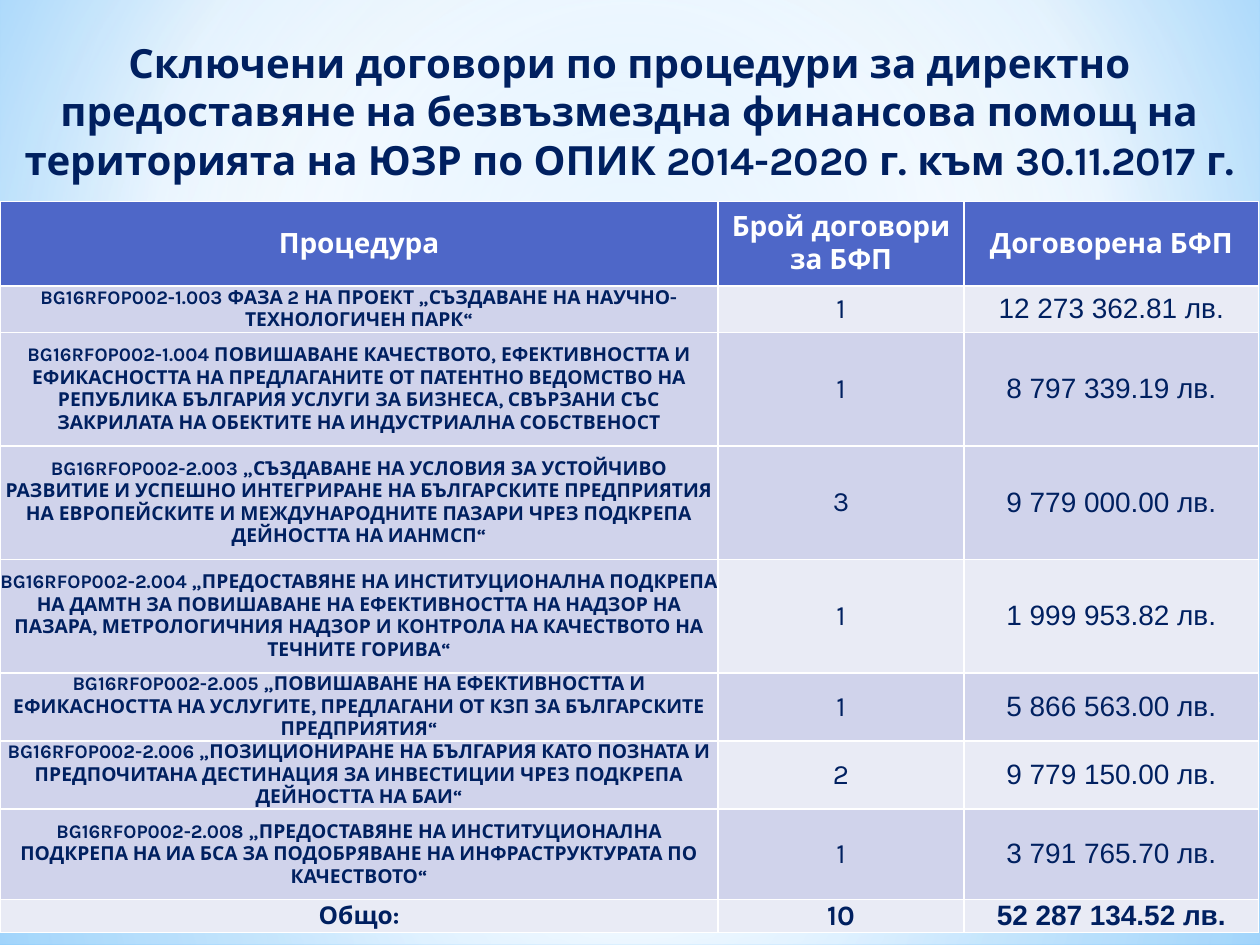
from dataclasses import dataclass

from lxml.etree import SubElement
from pptx import Presentation
from pptx.dml.color import RGBColor
from pptx.enum.shapes import MSO_SHAPE
from pptx.enum.text import MSO_ANCHOR, MSO_AUTO_SIZE, PP_ALIGN
from pptx.oxml.ns import qn
from pptx.util import Inches, Pt


@dataclass(frozen=True)
class Theme:
    navy: str = "002060"
    white: str = "FFFFFF"
    sky: str = "B4DCFA"
    header: str = "4E67C8"
    band: str = "D0D3EB"
    pale: str = "E9EBF5"
    backdrop: tuple = ((0, "9ED5FF", 100), (60, "FFFFFF", 100), (100, "5BB9FF", 100))
    text_font: str = "Karla"
    amount_font: str = "Arial"
    title_size: int = 23
    value_size: int = 16
    total_size: int = 14
    procedure_size: int = 11


TITLE = ("Сключени договори по процедури за директно предоставяне на безвъзмездна "
         "финансова помощ на територията на ЮЗР по ОПИК 2014-2020 г. към 30.11.2017 г.")
HEADINGS = ("Процедура", "Брой договори за БФП", "Договорена БФП")
CONTRACTS = (
    ("BG16RFOP002-1.003 ФАЗА 2 НА ПРОЕКТ „СЪЗДАВАНЕ НА НАУЧНО-ТЕХНОЛОГИЧЕН ПАРК“",
     "1", "12 273 362.81 лв."),
    ("BG16RFOP002-1.004 ПОВИШАВАНЕ КАЧЕСТВОТО, ЕФЕКТИВНОСТТА И ЕФИКАСНОСТТА НА "
     "ПРЕДЛАГАНИТЕ ОТ ПАТЕНТНО ВЕДОМСТВО НА РЕПУБЛИКА БЪЛГАРИЯ УСЛУГИ ЗА БИЗНЕСА, "
     "СВЪРЗАНИ СЪС ЗАКРИЛАТА НА ОБЕКТИТЕ НА ИНДУСТРИАЛНА СОБСТВЕНОСТ",
     "1", "8 797 339.19 лв."),
    ("BG16RFOP002-2.003 „СЪЗДАВАНЕ НА УСЛОВИЯ ЗА УСТОЙЧИВО РАЗВИТИЕ И УСПЕШНО "
     "ИНТЕГРИРАНЕ НА БЪЛГАРСКИТЕ ПРЕДПРИЯТИЯ НА ЕВРОПЕЙСКИТЕ И МЕЖДУНАРОДНИТЕ "
     "ПАЗАРИ ЧРЕЗ ПОДКРЕПА ДЕЙНОСТТА НА ИАНМСП“",
     "3", "9 779 000.00 лв."),
    ("BG16RFOP002-2.004 „ПРЕДОСТАВЯНЕ НА ИНСТИТУЦИОНАЛНА ПОДКРЕПА НА ДАМТН ЗА "
     "ПОВИШАВАНЕ НА ЕФЕКТИВНОСТТА НА НАДЗОР НА ПАЗАРА, МЕТРОЛОГИЧНИЯ НАДЗОР И "
     "КОНТРОЛА НА КАЧЕСТВОТО НА ТЕЧНИТЕ ГОРИВА“",
     "1", "1 999 953.82 лв."),
    ("BG16RFOP002-2.005 „ПОВИШАВАНЕ НА ЕФЕКТИВНОСТТА И ЕФИКАСНОСТТА НА УСЛУГИТЕ, "
     "ПРЕДЛАГАНИ ОТ КЗП ЗА БЪЛГАРСКИТЕ ПРЕДПРИЯТИЯ“",
     "1", "5 866 563.00 лв."),
    ("BG16RFOP002-2.006 „ПОЗИЦИОНИРАНЕ НА БЪЛГАРИЯ КАТО ПОЗНАТА И ПРЕДПОЧИТАНА "
     "ДЕСТИНАЦИЯ ЗА ИНВЕСТИЦИИ ЧРЕЗ ПОДКРЕПА ДЕЙНОСТТА НА БАИ“",
     "2", "9 779 150.00 лв."),
    ("BG16RFOP002-2.008 „ПРЕДОСТАВЯНЕ НА ИНСТИТУЦИОНАЛНА ПОДКРЕПА НА ИА БСА ЗА "
     "ПОДОБРЯВАНЕ НА ИНФРАСТРУКТУРАТА ПО КАЧЕСТВОТО“",
     "1", "3 791 765.70 лв."),
)
TOTAL = ("Общо:", "10", "52 287 134.52 лв.")
COLUMN_WIDTHS = (5.7, 1.95, 2.34)
ROW_HEIGHTS = (0.67, 0.37, 0.9, 0.9, 0.9, 0.54, 0.54, 0.72, 0.18)
PALE_ROWS = {1, 4, 6, 8}


def set_gradient(properties, stops, center=None):
    """Swap the solid fill for a gradient: radial around center, else top to bottom."""
    solid = properties.find(qn("a:solidFill"))
    gradient = SubElement(properties, qn("a:gradFill"), rotWithShape="1")
    properties.replace(solid, gradient)
    stop_list = SubElement(gradient, qn("a:gsLst"))
    for position, color, opacity in stops:
        stop = SubElement(stop_list, qn("a:gs"), pos=str(position * 1000))
        rgb = SubElement(stop, qn("a:srgbClr"), val=color)
        if opacity < 100:
            SubElement(rgb, qn("a:alpha"), val=str(opacity * 1000))
    if center:
        radial = SubElement(gradient, qn("a:path"), path="circle")
        SubElement(radial, qn("a:fillToRect"),
                   {side: str(inset * 1000) for side, inset in zip("ltrb", center)})
    else:
        SubElement(gradient, qn("a:lin"), ang="5400000", scaled="0")


class SlideBuilder:
    def __init__(self, slide, theme):
        self.slide = slide
        self.theme = theme

    def background(self):
        self.slide.background.fill.solid()
        properties = next(self.slide.element.iter(qn("p:bgPr")))
        set_gradient(properties, self.theme.backdrop, (20, 10, 20, 60))

    def glow(self, preset, top, height, stops, center=(50, 50, 50, 50)):
        glow = self.slide.shapes.add_shape(
            preset, 0, Inches(top), Inches(10), Inches(height))
        glow.shadow.inherit = False
        glow.line.fill.background()
        glow.fill.solid()
        set_gradient(glow.element.spPr, stops, center)

    def centered_text(self, frame, text, size, color, bold=True, font=None):
        frame.text = text
        paragraph = frame.paragraphs[0]
        paragraph.alignment = PP_ALIGN.CENTER
        run_font = paragraph.runs[0].font
        formats = {"name": font or self.theme.text_font, "size": Pt(size), "bold": bold}
        for attribute, value in formats.items():
            setattr(run_font, attribute, value)
        run_font.color.rgb = RGBColor.from_string(color)

    def title(self, text):
        title = self.slide.shapes.title
        box = {"left": 0, "top": Inches(0.13), "width": Inches(10), "height": Inches(1.5)}
        for attribute, value in box.items():
            setattr(title, attribute, value)
        frame = title.text_frame
        frame.auto_size = MSO_AUTO_SIZE.NONE
        frame.vertical_anchor = MSO_ANCHOR.MIDDLE
        self.centered_text(frame, text, self.theme.title_size, self.theme.navy)
        # The title stands in front of the glows.
        title.element.getparent().append(title.element)

    def cell(self, cell, text, fill, sides="LRTB", **text_style):
        formats = {"vertical_anchor": MSO_ANCHOR.MIDDLE, "margin_left": 0,
                   "margin_right": 0, "margin_top": 0, "margin_bottom": 0}
        for attribute, value in formats.items():
            setattr(cell, attribute, value)
        properties = cell._tc.get_or_add_tcPr()
        for side in sides:
            border = SubElement(properties, qn(f"a:ln{side}"), w=str(Pt(1)))
            paint = SubElement(border, qn("a:solidFill"))
            SubElement(paint, qn("a:srgbClr"), val=self.theme.white)
        cell.fill.solid()
        cell.fill.fore_color.rgb = RGBColor.from_string(fill)
        self.centered_text(cell.text_frame, text, **text_style)

    def contracts_table(self):
        theme = self.theme
        rows = (HEADINGS, *CONTRACTS, TOTAL)
        last = len(rows) - 1
        table = self.slide.shapes.add_table(
            len(rows), len(HEADINGS), 0, Inches(1.6),
            Inches(sum(COLUMN_WIDTHS)), Inches(sum(ROW_HEIGHTS))).table
        for column, width in zip(table.columns, COLUMN_WIDTHS):
            column.width = Inches(width)
        for row, height in zip(table.rows, ROW_HEIGHTS):
            row.height = Inches(height)

        for r, texts in enumerate(rows):
            for c, text in enumerate(texts):
                style = {"fill": theme.pale if r in PALE_ROWS else theme.band,
                         "size": theme.value_size, "color": theme.navy,
                         "bold": c == 0 or r in (0, last)}
                if r == 0:
                    style.update(fill=theme.header, color=theme.white)
                elif c == 2:
                    style.update(font=theme.amount_font)
                elif c == 0 and r == last:
                    style.update(size=theme.total_size, sides="LRT")
                elif c == 0:
                    style.update(size=theme.procedure_size, fill=theme.band)
                self.cell(table.cell(r, c), text, **style)


def main():
    deck = Presentation()
    deck.slide_width, deck.slide_height = Inches(10), Inches(7.5)
    theme = Theme()
    builder = SlideBuilder(deck.slides.add_slide(deck.slide_layouts[5]), theme)
    white, sky = theme.white, theme.sky

    builder.background()
    builder.glow(MSO_SHAPE.RECTANGLE, 5.58, 1.92,
                 ((0, white, 91), (37, white, 76), (100, sky, 79)))
    builder.glow(MSO_SHAPE.RECTANGLE, 0, 5.58,
                 ((0, white, 89), (48, white, 62), (100, sky, 79)))
    builder.glow(MSO_SHAPE.RECTANGLE, 4.12, 2.5,
                 ((0, white, 0), (29, white, 30), (45, sky, 40),
                  (55, white, 26), (65, sky, 60), (100, white, 0)), center=None)
    builder.glow(MSO_SHAPE.OVAL, 1.75, 5.58, ((0, white, 100), (56, white, 0)))
    builder.title(TITLE)
    builder.contracts_table()
    deck.save("out.pptx")


if __name__ == "__main__":
    main()
